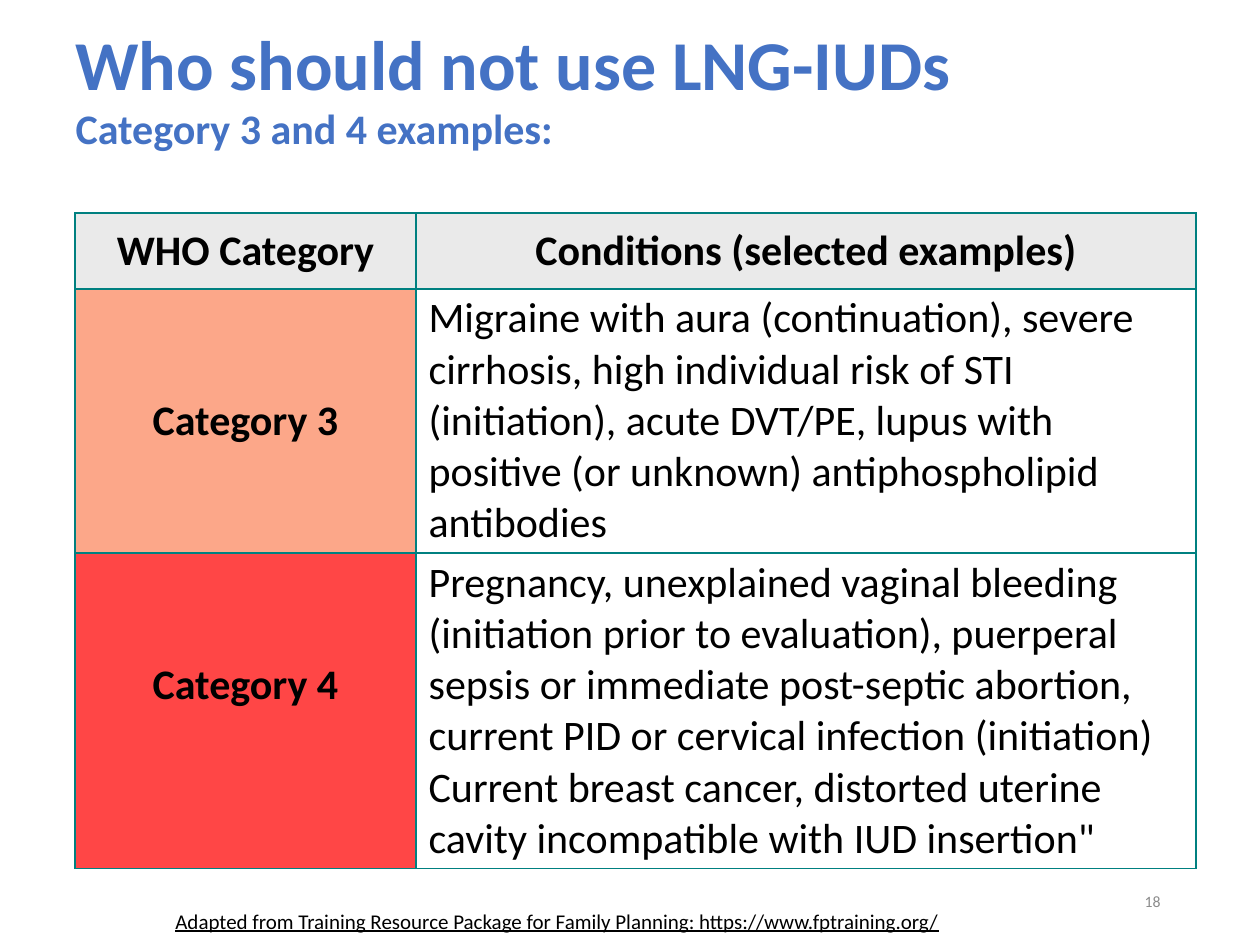
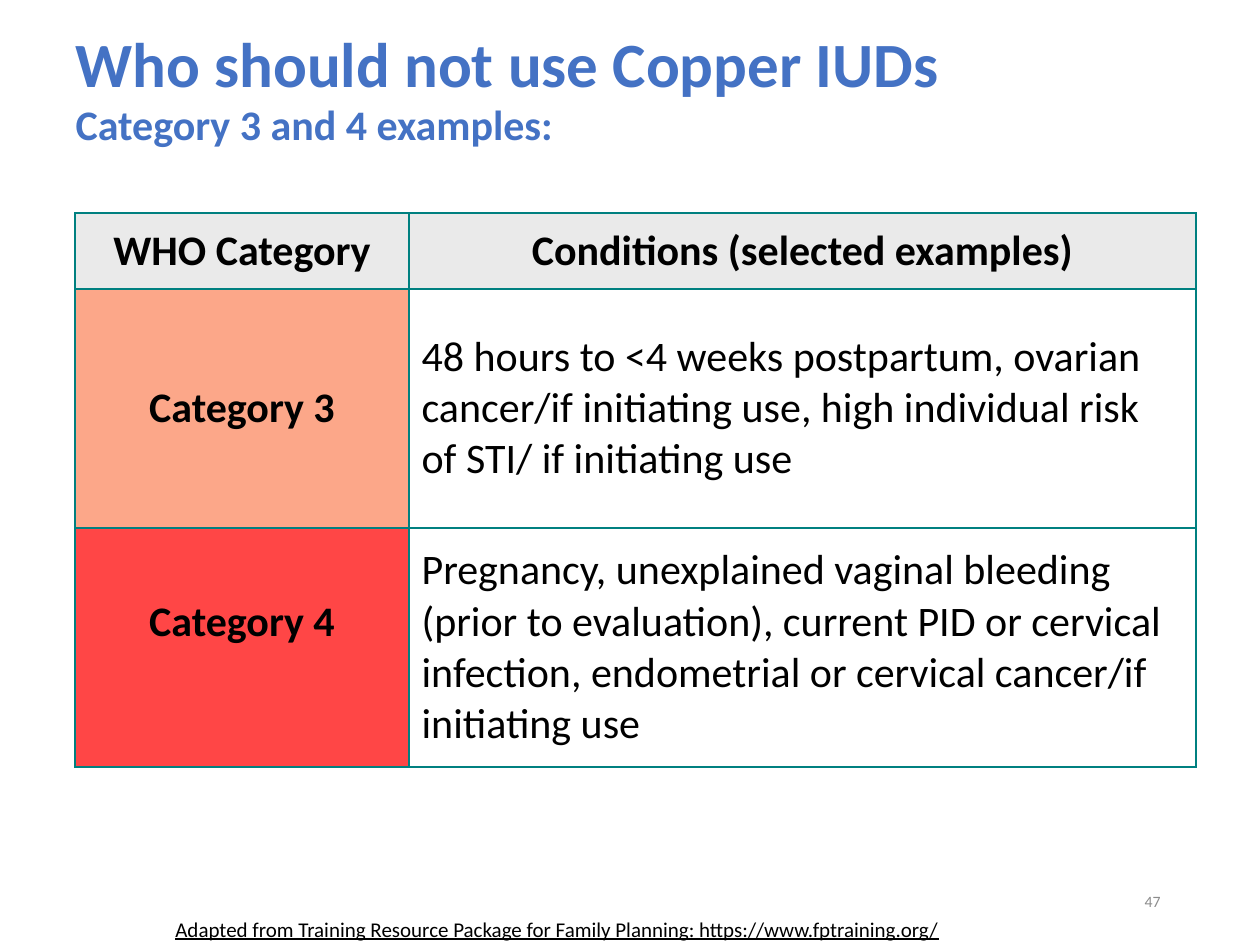
from lxml import etree
from pptx import Presentation
from pptx.dml.color import RGBColor
from pptx.enum.text import MSO_ANCHOR, MSO_AUTO_SIZE, PP_ALIGN
from pptx.oxml.ns import qn
from pptx.util import Emu, Pt

LEFT, CENTER, RIGHT = PP_ALIGN.LEFT, PP_ALIGN.CENTER, PP_ALIGN.RIGHT
TOP, MIDDLE = MSO_ANCHOR.TOP, MSO_ANCHOR.MIDDLE
NO_FIT = MSO_AUTO_SIZE.NONE

FONT = "Calibri"
COLORS = {"title": "4472C4", "text": "000000", "number": "8C8C8C", "border": "008080",
          "header": "EAEAEA", "category3": "FCA789", "category4": "FF4646"}
SUBTITLE = "Category 3 and 4 examples:"
HEADER = ("WHO Category", "Conditions (selected examples)")
CREDIT = "Adapted from Training Resource Package for Family Planning: https://www.fptraining.org/"

SLIDES = [
    {"title": "Who should not use LNG-IUDs", "title_size": 40, "number": "18", "credit_top": 902,
     "columns": (341, 780), "rows": (76, 264, 315),
     "conditions": (
         "Migraine with aura (continuation), severe cirrhosis, high individual risk of STI "
         "(initiation), acute DVT/PE, lupus with positive (or unknown) antiphospholipid antibodies",
         "Pregnancy, unexplained vaginal bleeding (initiation prior to evaluation), puerperal "
         "sepsis or immediate post-septic abortion, current PID or cervical infection (initiation) "
         "Current breast cancer, distorted uterine cavity incompatible with IUD insertion\"")},
    {"title": "Who should not use Copper IUDs", "title_size": 36, "number": "47", "credit_top": 910,
     "columns": (334, 787), "rows": (76, 239, 239),
     "conditions": (
         "48 hours to <4 weeks postpartum, ovarian cancer/if initiating use, "
         "high individual risk of STI/ if initiating use",
         "Pregnancy, unexplained vaginal bleeding (prior to evaluation), current PID or cervical "
         "infection, endometrial or cervical cancer/if initiating use")},
]

SLIDE_W, SLIDE_H = 1260, 945
TITLE_BOX = (63, 25, 1164, 130)
TABLE_LEFT, TABLE_TOP = 75, 213
CELL_PAD, LABEL_LIFT = 4, 51
NUMBER_BOX = (889, 876, 284, 50)
CREDIT_LEFT, CREDIT_W, CREDIT_H = 163, 874, 34


def px(n):
    return Emu(round(n * 914400 / 126))


def rgb(name):
    return RGBColor.from_string(COLORS[name])


def style(p, size, color, align=LEFT, bold=False, underline=False):
    p.alignment = align
    p.font.name, p.font.size, p.font.bold = FONT, Pt(size), bold
    p.font.color.rgb = rgb(color)
    if underline:
        p.font.underline = True


def add_title(slide, text, size):
    sp = slide.shapes.title
    sp.left, sp.top, sp.width, sp.height = map(px, TITLE_BOX)
    tf = sp.text_frame
    tf.text = f"{text}\n{SUBTITLE}"
    tf.auto_size, tf.vertical_anchor, tf.word_wrap = NO_FIT, MIDDLE, True
    for p, points in zip(tf.paragraphs, (size, 24)):
        style(p, points, "title", bold=True)
        p.line_spacing = 0.95


def add_text(slide, box, text, anchor, *font, **options):
    tf = slide.shapes.add_textbox(*map(px, box)).text_frame
    tf.text, tf.word_wrap, tf.vertical_anchor = text, True, anchor
    style(tf.paragraphs[0], *font, **options)


def add_borders(cell):
    tc_pr = cell._tc.get_or_add_tcPr()
    for i, side in enumerate(("lnL", "lnR", "lnT", "lnB")):
        ln = etree.Element(qn(f"a:{side}"), w=str(Pt(1)))
        fill = etree.SubElement(ln, qn("a:solidFill"))
        etree.SubElement(fill, qn("a:srgbClr"), val=COLORS["border"])
        tc_pr.insert(i, ln)


def fill_cell(cell, text, fill, is_label):
    cell.text = text
    cell.vertical_anchor = MIDDLE
    cell.margin_top = px(CELL_PAD)
    cell.margin_bottom = px(CELL_PAD + (LABEL_LIFT if fill == "category4" else 0))
    style(cell.text_frame.paragraphs[0], 24, "text", CENTER if is_label else LEFT, is_label)
    if fill:
        cell.fill.solid()
        cell.fill.fore_color.rgb = rgb(fill)
    else:
        cell.fill.background()
    add_borders(cell)


def add_categories(slide, columns, rows, conditions):
    box = (TABLE_LEFT, TABLE_TOP, sum(columns), sum(rows))
    table = slide.shapes.add_table(len(rows), len(columns), *map(px, box)).table
    table.first_row = table.horz_banding = False
    for column, width in zip(table.columns, columns):
        column.width = px(width)
    for row, height in zip(table.rows, rows):
        row.height = px(height)
    for c, text in enumerate(HEADER):
        fill_cell(table.cell(0, c), text, "header", True)
    for r, (number, text) in enumerate(zip((3, 4), conditions), 1):
        fill_cell(table.cell(r, 0), f"Category {number}", f"category{number}", True)
        fill_cell(table.cell(r, 1), text, None, False)


def main():
    prs = Presentation()
    prs.slide_width, prs.slide_height = px(SLIDE_W), px(SLIDE_H)
    for s in SLIDES:
        slide = prs.slides.add_slide(prs.slide_layouts[5])
        add_title(slide, s["title"], s["title_size"])
        add_categories(slide, s["columns"], s["rows"], s["conditions"])
        add_text(slide, NUMBER_BOX, s["number"], MIDDLE, 9, "number", RIGHT)
        credit_box = (CREDIT_LEFT, s["credit_top"], CREDIT_W, CREDIT_H)
        add_text(slide, credit_box, CREDIT, TOP, 12, "text", underline=True)
    prs.save("out.pptx")


if __name__ == "__main__":
    main()
